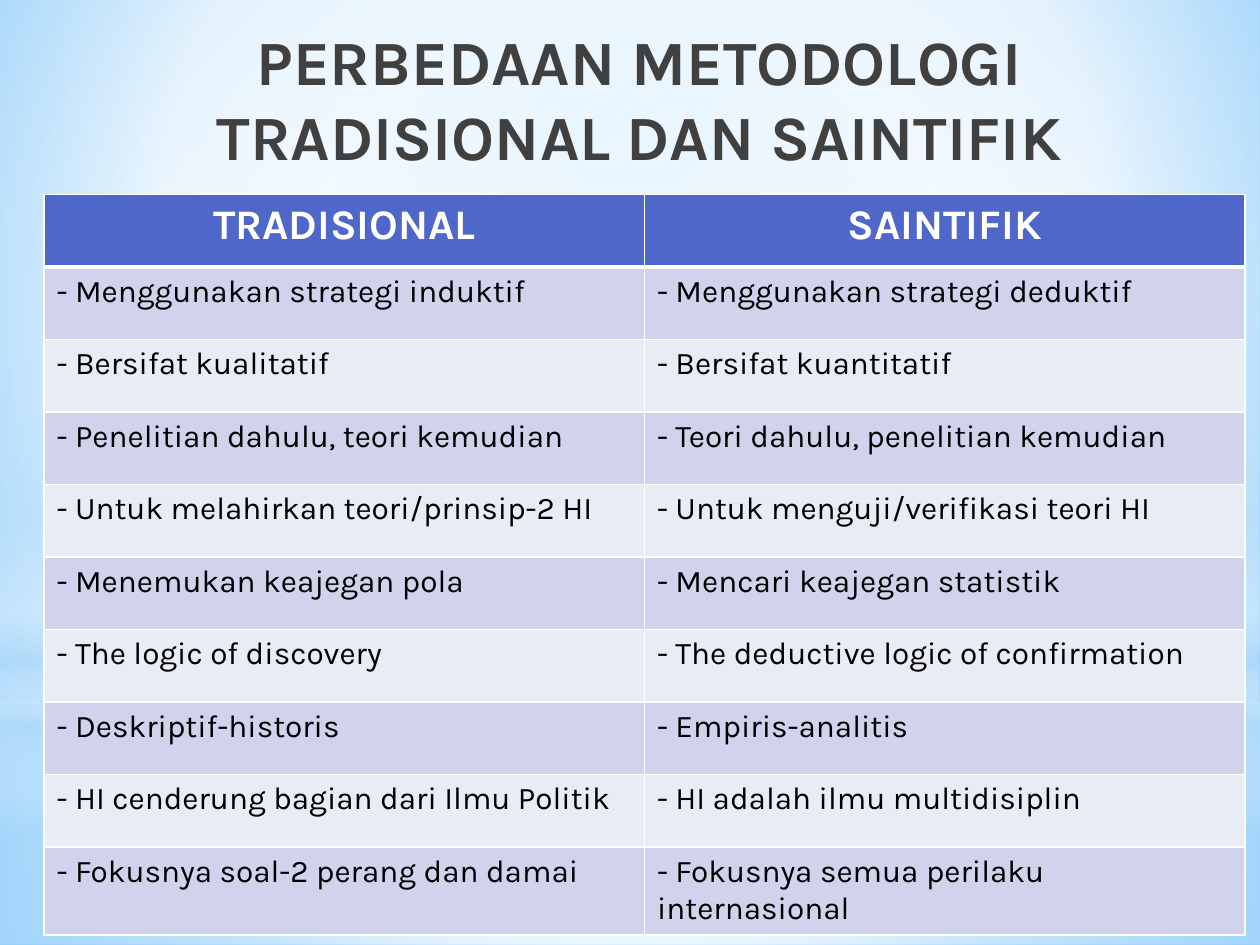
from lxml import etree
from pptx import Presentation, util as u
from pptx.dml.color import RGBColor
from pptx.enum import shapes, text
from pptx.oxml import parse_xml
from pptx.oxml.ns import nsdecls, qn

WIDTH, HEIGHT = u.Inches(10), u.Inches(7.5)
FONT = "Karla"
COLORS = {
    "title": "404040", "header": "4E67C8", "band": "D0D3EB", "plain": "E9EBF5",
    "white": "FFFFFF", "black": "000000", "pale": "B4DCFA", "sky": "9ED5FF", "deep": "5BB9FF",
}
CENTER = (50, 50, 50, 50)
TITLE = "PERBEDAAN METODOLOGI TRADISIONAL DAN SAINTIFIK"
ROWS = [
    ("TRADISIONAL", "SAINTIFIK"),
    ("- Menggunakan strategi induktif", "- Menggunakan strategi deduktif"),
    ("- Bersifat kualitatif", "- Bersifat kuantitatif"),
    ("- Penelitian dahulu, teori kemudian", "- Teori dahulu, penelitian kemudian"),
    ("- Untuk melahirkan teori/prinsip-2 HI", "- Untuk menguji/verifikasi teori HI"),
    ("- Menemukan keajegan pola", "- Mencari keajegan statistik"),
    ("- The logic of discovery", "- The deductive logic of confirmation"),
    ("- Deskriptif-historis", "- Empiris-analitis"),
    ("- HI cenderung bagian dari Ilmu Politik", "- HI adalah ilmu multidisiplin"),
    ("- Fokusnya soal-2 perang dan damai", "- Fokusnya semua perilaku internasional"),
]


def color(name):
    return RGBColor.from_string(COLORS[name])


def share(left, top, width, height):
    """Turn shares of the slide's size into a box of lengths."""
    return [int(part * side) for part, side in
            zip((left, top, width, height), (WIDTH, HEIGHT) * 2)]


def set_gradient(owner, stops, focus=None):
    """Swap the solid fill in owner for stops of (position, colour, opacity).

    The gradient is circular around focus, or runs downwards without one.
    """
    marks = "".join(
        f'<a:gs pos="{place * 1000}"><a:srgbClr val="{COLORS[name]}">'
        f'<a:alpha val="{opacity * 1000}"/></a:srgbClr></a:gs>'
        for place, name, opacity in stops)
    if focus:
        left, top, right, bottom = (value * 1000 for value in focus)
        shade = (f'<a:path path="circle"><a:fillToRect l="{left}" t="{top}" '
                 f'r="{right}" b="{bottom}"/></a:path>')
    else:
        shade = '<a:lin ang="5400000" scaled="0"/>'
    solid = owner.find(".//" + qn("a:solidFill"))
    solid.getparent().replace(solid, parse_xml(
        f'<a:gradFill {nsdecls("a")} rotWithShape="1">'
        f'<a:gsLst>{marks}</a:gsLst>{shade}</a:gradFill>'))


def add_glow(page, kind, box, stops, focus=None):
    glow = page.shapes.add_shape(kind, *box)
    glow.shadow.inherit = False
    glow.line.fill.background()
    glow.fill.solid()
    glow.fill.fore_color.rgb = color("white")
    set_gradient(glow.element.spPr, stops, focus)


def add_backdrop(page):
    fill = page.background.fill
    fill.solid()
    fill.fore_color.rgb = color("white")
    set_gradient(page.element.find(".//" + qn("p:bgPr")),
                 [(0, "sky", 100), (60, "white", 100), (100, "deep", 100)],
                 (20, 10, 20, 60))
    rectangle, oval = shapes.MSO_SHAPE.RECTANGLE, shapes.MSO_SHAPE.OVAL
    horizon = 0.744
    add_glow(page, rectangle, share(0, horizon, 1, 1 - horizon),
             [(0, "white", 91), (37, "white", 76), (100, "pale", 79)], CENTER)
    add_glow(page, rectangle, share(0, 0, 1, horizon),
             [(0, "white", 89), (48, "white", 62), (100, "pale", 79)], CENTER)
    add_glow(page, rectangle, share(0, 0.55, 1, 1 / 3),
             [(0, "white", 0), (29, "white", 30), (45, "pale", 40),
              (55, "white", 26), (65, "pale", 60), (100, "white", 0)])
    add_glow(page, oval, share(0, 0.233, 1, horizon),
             [(0, "white", 100), (56, "white", 0)], CENTER)


def add_span(para, words, size, name, bold):
    span = para.add_run()
    span.text = words
    span.font.name, span.font.size, span.font.bold = FONT, u.Pt(size), bold
    span.font.color.rgb = color(name)


def add_title(page, box):
    frame = page.shapes.add_textbox(*box).text_frame
    frame.word_wrap = True
    frame.vertical_anchor = text.MSO_ANCHOR.TOP
    para = frame.paragraphs[0]
    para.alignment = text.PP_ALIGN.CENTER
    add_span(para, TITLE, 36, "title", True)


def set_borders(cell, widths):
    """Draw white borders; widths maps L, R, T and B to points."""
    properties = cell._tc.get_or_add_tcPr()
    for index, (side, width) in enumerate(widths.items()):
        line = etree.Element(qn(f"a:ln{side}"), w=str(u.Pt(width)))
        solid = etree.SubElement(line, qn("a:solidFill"))
        etree.SubElement(solid, qn("a:srgbClr"), val=COLORS["white"])
        properties.insert(index, line)


def add_comparison(page, box):
    table = page.shapes.add_table(len(ROWS), len(ROWS[0]), *box).table
    for row in table.rows:
        row.height = box[3] // len(ROWS)
    for index, words in enumerate(ROWS):
        header = index == 0
        fill = "header" if header else "band" if index % 2 else "plain"
        for column, entry in enumerate(words):
            cell = table.cell(index, column)
            cell.fill.solid()
            cell.fill.fore_color.rgb = color(fill)
            set_borders(cell, {"L": 1, "R": 1, "T": 3 if index == 1 else 1,
                               "B": 3 if header else 1})
            para = cell.text_frame.paragraphs[0]
            if header:
                para.alignment = text.PP_ALIGN.CENTER
                add_span(para, entry, 24, "white", True)
            else:
                add_span(para, entry, 18, "black", False)


def main():
    deck = Presentation()
    deck.slide_width, deck.slide_height = WIDTH, HEIGHT
    page = deck.slides.add_slide(deck.slide_layouts[6])
    add_backdrop(page)
    add_title(page, share(0.051, 0.017, 0.913, 0.136))
    add_comparison(page, share(0.035, 0.206, 0.953, 0.767))
    deck.save("out.pptx")


if __name__ == "__main__":
    main()
